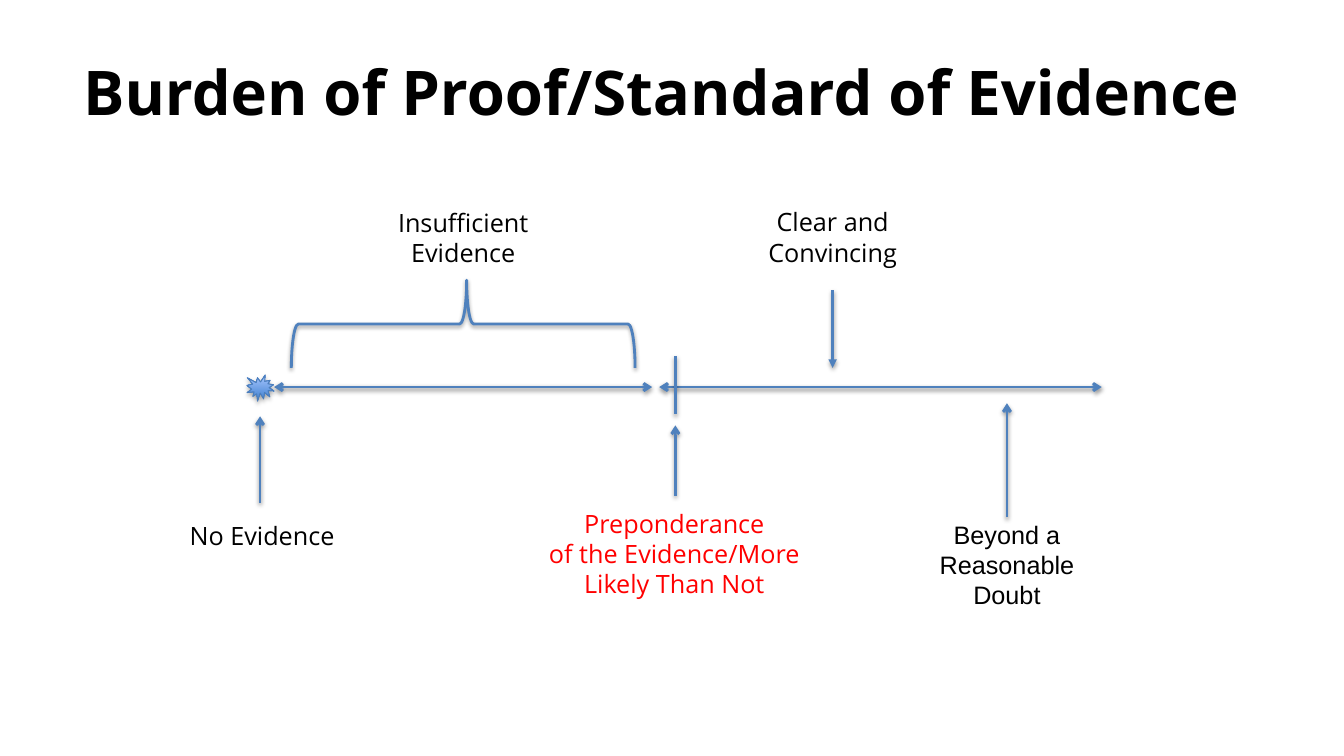
from dataclasses import dataclass

from lxml import etree
from pptx import Presentation
from pptx import util as u
from pptx.dml.color import RGBColor
from pptx.enum import shapes, text
from pptx.oxml import parse_xml
from pptx.oxml.ns import nsdecls, qn


@dataclass
class Theme:
    ink = RGBColor(0x00, 0x00, 0x00)
    accent = RGBColor(0xFF, 0x00, 0x00)
    line = RGBColor(0x4F, 0x81, 0xBD)
    seal_line = RGBColor(0x4B, 0x7E, 0xBC)
    seal_fill = (RGBColor(0x3F, 0x80, 0xCE), RGBColor(0xA4, 0xC4, 0xFF))
    title_size = u.Pt(44)
    label_size = u.Pt(18)
    line_width = u.Pt(2)
    seal_width = u.Pt(0.75)
    font = "Open Sans"
    plain_font = "Arial"


theme = Theme()

# Grid of 80 columns by 45 rows of square cells
CELL = u.Inches(1) // 6
deck = Presentation()
deck.slide_width, deck.slide_height = 80 * CELL, 45 * CELL
page = deck.slides.add_slide(deck.slide_layouts[6])


def grid(*cells):
    return [u.Emu(round(cell * CELL)) for cell in cells]


def outline(shape, color, width, opacity=38, distance=1.6):
    """Set the line of a shape and the soft shadow below it."""
    shape.line.color.rgb = color
    shape.line.width = width
    shape._element.spPr.append(parse_xml(
        f'<a:effectLst {nsdecls("a")}>'
        f'<a:outerShdw blurRad="{u.Pt(3.1)}" dist="{u.Pt(distance)}" '
        'dir="5400000" rotWithShape="0"><a:srgbClr val="000000">'
        f'<a:alpha val="{opacity * 1000}"/></a:srgbClr>'
        '</a:outerShdw></a:effectLst>'))


# Title and labels: center column, top row, width, height, lines, style
regular, plain = theme.font, theme.plain_font
labels = [
    (39.39, 2.82, 74.58, 5.22, ["Burden of Proof/Standard of Evidence"],
     regular, theme.title_size, theme.ink),
    (15.6, 30.66, 11.04, 2.4, ["No Evidence"],
     regular, theme.label_size, theme.ink),
    (27.57, 12.06, 9.06, 4.26, ["Insufficient", "Evidence"],
     regular, theme.label_size, theme.ink),
    (40.14, 29.94, 17.64, 6.06,
     ["Preponderance", "of the Evidence/More Likely Than Not"],
     regular, theme.label_size, theme.accent),
    (49.56, 12, 9.12, 4.26, ["Clear and Convincing"],
     regular, theme.label_size, theme.ink),
    (59.94, 30.6, 12.36, 6.06, ["Beyond a Reasonable Doubt"],
     plain, theme.label_size, theme.ink),
]
for center, top, width, height, lines, font, size, color in labels:
    box = page.shapes.add_textbox(*grid(center - width / 2, top, width, height))
    frame = box.text_frame
    frame.word_wrap = True
    is_title = size == theme.title_size
    frame.vertical_anchor = (text.MSO_ANCHOR.MIDDLE if is_title
                             else text.MSO_ANCHOR.TOP)
    frame.text = "\n".join(lines)
    for para in frame.paragraphs:
        para.alignment = text.PP_ALIGN.CENTER
        para.font.name = font
        para.font.size = size
        para.font.bold = is_title
        para.font.color.rgb = color

# Scale and pointers: start column and row, end column and row, arrowheads
AXIS = 23.04
connectors = [
    (16.32, AXIS, 38.82, AXIS, "arrow", "arrow"),
    (39.24, AXIS, 65.58, AXIS, "arrow", "arrow"),
    (15.48, 29.94, 15.48, 24.78, None, "arrow"),
    (40.2, 29.52, 40.2, 25.32, None, "arrow"),
    (40.2, 21.18, 40.2, 24.66, None, None),
    (59.94, 30.78, 59.94, 24, None, "arrow"),
    (49.56, 17.28, 49.56, 21.9, None, "triangle"),
]
for *ends, head, tail in connectors:
    connector = page.shapes.add_connector(shapes.MSO_CONNECTOR.STRAIGHT,
                                          *grid(*ends))
    outline(connector, theme.line, theme.line_width)
    for tag, kind in (("a:headEnd", head), ("a:tailEnd", tail)):
        if kind:
            etree.SubElement(connector.line._get_or_add_ln(), qn(tag), type=kind)

# Starburst at the start of the scale
seal = page.shapes.add_shape(shapes.MSO_SHAPE.EXPLOSION1,
                             *grid(14.7, 22.32, 1.62, 1.56))
seal.fill.gradient()
seal.fill.gradient_angle = 90
for stop, color in zip(seal.fill.gradient_stops, theme.seal_fill):
    stop.color.rgb = color
outline(seal, theme.seal_line, theme.seal_width, opacity=35, distance=1.8)

# Brace over the insufficient range
brace = page.shapes.add_shape(shapes.MSO_SHAPE.LEFT_BRACE,
                              *grid(24.96, 9.06, 5.22, 20.46))
brace.rotation = 90
brace.adjustments[0], brace.adjustments[1] = 0.08, 0.49
brace.fill.background()
outline(brace, theme.line, theme.line_width)

deck.save("out.pptx")
